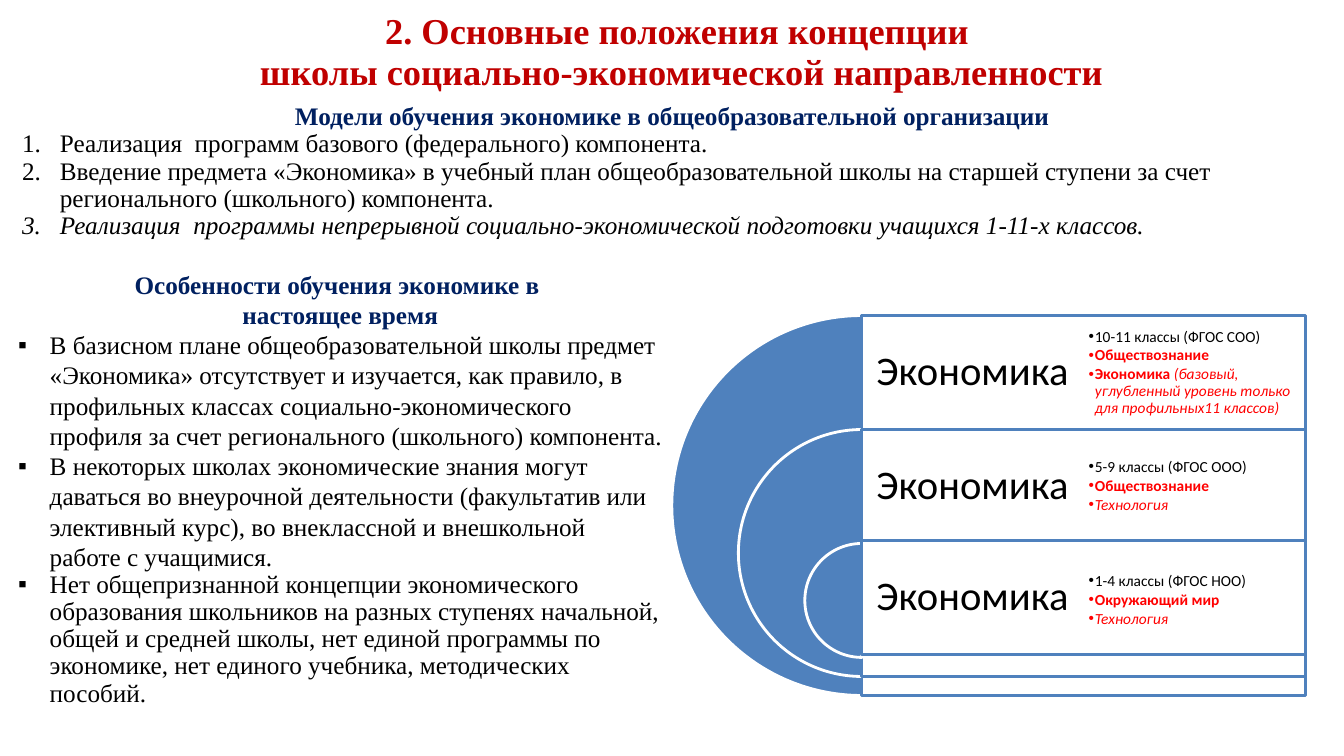
import dataclasses
import typing

import lxml.etree
import pptx
import pptx.dml.color
import pptx.enum.shapes
import pptx.enum.text
import pptx.oxml.ns
import pptx.util

Pt = pptx.util.Pt
RGB = pptx.dml.color.RGBColor
ALIGN = pptx.enum.text.PP_ALIGN
ANCHOR = pptx.enum.text.MSO_ANCHOR
SHAPE = pptx.enum.shapes.MSO_SHAPE
qn = pptx.oxml.ns.qn

BLACK = RGB(0x00, 0x00, 0x00)
WHITE = RGB(0xFF, 0xFF, 0xFF)
NAVY = RGB(0x00, 0x20, 0x60)
CRIMSON = RGB(0xC0, 0x00, 0x00)
RED = RGB(0xFF, 0x00, 0x00)
BLUE = RGB(0x4F, 0x81, 0xBD)
SERIF, SANS = "Times New Roman", "Calibri"

EDGE, TOP, STEP = 615.6, 225.4, 81.4
WIDE, TALL, SHRINK = 316.8, 271.4, 95


@dataclasses.dataclass
class Run:
    text: str
    color: RGB = BLACK
    bold: bool = False
    slant: bool = False


@dataclasses.dataclass
class Para:
    runs: list[Run]
    mark: str = ""
    indent: float = 0
    line: float = 1
    after: float = 0
    align: ALIGN = ALIGN.LEFT


@dataclasses.dataclass
class Stage:
    grade: str
    main: list[Run]
    extra: list[Run]
    lift: float = 0


def place(shape: typing.Any, left: float, top: float, width: float, height: float) -> None:
    shape.left, shape.top = Pt(left), Pt(top)
    shape.width, shape.height = Pt(width), Pt(height)


def bullet(para: typing.Any, mark: str, indent: float) -> None:
    """Set a hanging bullet; the mark "1." numbers the paragraph."""
    props = para._p.get_or_add_pPr()
    props.set("marL", str(Pt(indent)))
    props.set("indent", str(-Pt(indent)))
    if not mark:
        lxml.etree.SubElement(props, qn("a:buNone"))
    elif mark == "1.":
        lxml.etree.SubElement(props, qn("a:buFont"), typeface=SERIF)
        lxml.etree.SubElement(props, qn("a:buAutoNum"), type="arabicPeriod")
    else:
        lxml.etree.SubElement(props, qn("a:buFont"), typeface="Arial")
        lxml.etree.SubElement(props, qn("a:buChar"), char=mark)


def write(shape: typing.Any, paras: list[Para], font: str, size: float,
          anchor: ANCHOR = ANCHOR.TOP, inset: float | None = None) -> None:
    frame = shape.text_frame
    frame.word_wrap = True
    frame.auto_size = pptx.enum.text.MSO_AUTO_SIZE.NONE
    frame.vertical_anchor = anchor
    if inset is not None:
        frame.margin_left = frame.margin_right = Pt(inset)
        frame.margin_top = frame.margin_bottom = Pt(inset)
    for num, item in enumerate(paras):
        para = frame.add_paragraph() if num else frame.paragraphs[0]
        para.alignment = item.align
        para.line_spacing = item.line
        para.space_before, para.space_after = Pt(0), Pt(item.after)
        bullet(para, item.mark, item.indent)
        for part in item.runs:
            run = para.add_run()
            run.text = part.text
            run.font.name, run.font.size = font, Pt(size)
            run.font.bold, run.font.italic = part.bold, part.slant
            run.font.color.rgb = part.color


def block(group: typing.Any, kind: SHAPE, box: tuple[float, ...], fill: RGB, line: RGB) -> typing.Any:
    shape = group.shapes.add_shape(kind, *map(Pt, box))
    shape.shadow.inherit = False
    shape.fill.solid()
    shape.fill.fore_color.rgb = fill
    shape.line.color.rgb, shape.line.width = line, Pt(2)
    return shape


def label(group: typing.Any, left: float, top: float, paras: list[Para],
          size: float, inset: float) -> None:
    box = group.shapes.add_textbox(Pt(left), Pt(top), Pt(WIDE / 2), Pt(STEP))
    write(box, paras, SANS, size, ANCHOR.MIDDLE, inset)


def ring(group: typing.Any, num: int, stage: Stage) -> None:
    """Draw one half disc with its frame, subject and list."""
    top, size = TOP + num * STEP, TALL - num * SHRINK
    pie = block(group, SHAPE.PIE, (EDGE - size / 2, top, size, size), BLUE, WHITE)
    pie.adjustments[0], pie.adjustments[1] = 54, 162
    rise = top - stage.lift
    card = block(group, SHAPE.RECTANGLE, (EDGE, rise, WIDE, size), WHITE, BLUE)
    tint = card.fill._xPr.find(qn("a:solidFill"))[0]
    lxml.etree.SubElement(tint, qn("a:alpha"), val="90000")
    subject = Para([Run("Экономика")], line=0.9, align=ALIGN.CENTER)
    label(group, EDGE, rise, [subject], 29, 8.6)
    rows = [[Run(stage.grade)], stage.main, stage.extra]
    paras = [Para(row, "•", 4.5, 0.9, 1.6) for row in rows]
    label(group, EDGE + WIDE / 2, top, paras, 11, 3.6)


def head(text: str, color: RGB, line: float = 1, indent: float = 0) -> Para:
    return Para([Run(text, color, True)], indent=indent, line=line, align=ALIGN.CENTER)


TITLE = [
    head("2. Основные положения концепции ", CRIMSON, 0.95),
    head("школы социально-экономической направленности", CRIMSON, 0.95),
]
MODELS = [
    head("Модели обучения экономике в общеобразовательной организации", NAVY, 0.9),
    *[Para([run], "1.", 27, 0.9) for run in (
        Run("Реализация  программ базового (федерального) компонента."),
        Run("Введение предмета «Экономика» в учебный план общеобразовательной школы "
            "на старшей ступени за счет регионального (школьного) компонента."),
        Run("Реализация  программы непрерывной социально-экономической подготовки "
            "учащихся 1-11-х классов.", slant=True),
    )],
]
TRAITS = [
    head("Особенности обучения экономике в ", NAVY),
    head("настоящее время", NAVY),
    *[Para([Run(text)], "▪", 22.5, line) for text, line in (
        ("В базисном плане общеобразовательной школы предмет «Экономика» отсутствует "
         "и изучается, как правило, в профильных классах социально-экономического "
         "профиля за счет регионального (школьного) компонента.", 1),
        ("В некоторых школах экономические знания могут даваться во внеурочной "
         "деятельности (факультатив или элективный курс), во внеклассной и внешкольной "
         "работе с учащимися.", 1),
        ("Нет общепризнанной концепции экономического образования школьников на разных "
         "ступенях начальной, общей и средней школы, нет единой программы по экономике, "
         "нет единого учебника, методических пособий.", 0.9),
    )],
]
SOCIAL = Run("Обществознание", RED, True)
CRAFT = Run("Технология", RED, slant=True)
STAGES = [
    Stage("10-11 классы (ФГОС СОО)", [SOCIAL], [
        Run("Экономика ", RED, True),
        Run("(базовый, углубленный уровень только для профильных11 классов)", RED, slant=True),
    ]),
    Stage("5-9 классы (ФГОС ООО)", [SOCIAL], [CRAFT]),
    Stage("1-4 классы (ФГОС НОО)", [Run("Окружающий мир", RED, True)], [CRAFT], 2.2),
]


def main() -> None:
    deck = pptx.Presentation()
    deck.slide_width, deck.slide_height = Pt(960), Pt(540)
    slide = deck.slides.add_slide(deck.slide_layouts[3])
    title, traits, models = slide.placeholders
    place(title, 7, 4.3, 960, 67)
    write(title, TITLE, SERIF, 26)
    place(traits, 5.8, 188.6, 474.5, 345.6)
    write(traits, TRAITS, SERIF, 18)
    place(models, 8.6, 70.6, 943.2, 108.7)
    write(models, MODELS, SERIF, 18)
    group = slide.shapes.add_group_shape()
    for num, stage in enumerate(STAGES):
        ring(group, num, stage)
    deck.save("out.pptx")


if __name__ == "__main__":
    main()
